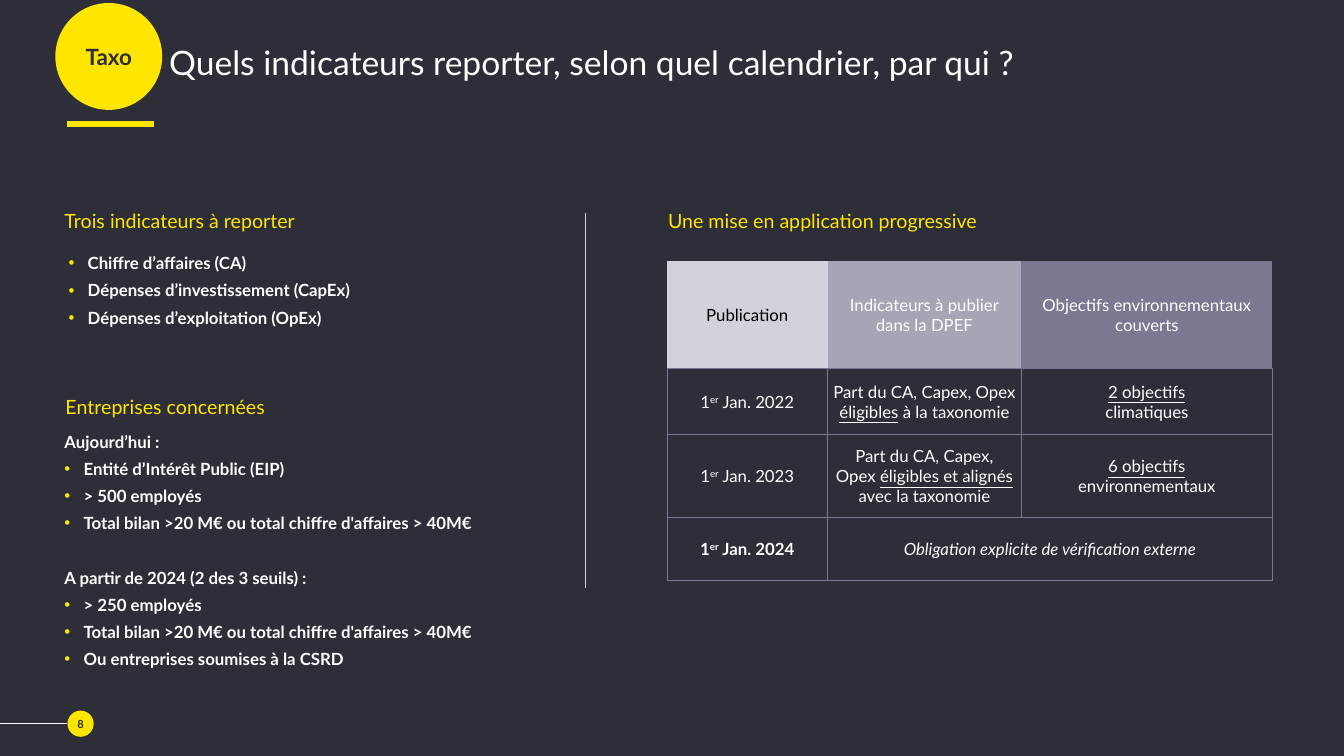
from typing import NamedTuple

from lxml import etree
from pptx import Presentation, util as u
from pptx.dml.color import RGBColor
from pptx.enum import shapes, text
from pptx.oxml import ns

DARK = RGBColor(0x2E, 0x2E, 0x38)
YELLOW = RGBColor(0xFF, 0xE6, 0x00)
WHITE = RGBColor(0xFF, 0xFF, 0xFF)
BLACK = RGBColor(0x00, 0x00, 0x00)
PALE = RGBColor(0xD2, 0xD2, 0xDA)
GREY = RGBColor(0xA5, 0xA5, 0xB5)
SLATE = RGBColor(0x79, 0x79, 0x91)

LEFT, CENTER = text.PP_ALIGN.LEFT, text.PP_ALIGN.CENTER
TOP, MIDDLE = text.MSO_ANCHOR.TOP, text.MSO_ANCHOR.MIDDLE

INDICATORS = ["• Chiffre d’affaires (CA)", "• Dépenses d’investissement (CapEx)",
              "• Dépenses d’exploitation (OpEx)"]
BALANCE = "• Total bilan >20 M€ ou total chiffre d'affaires > 40M€"
COMPANIES = ["Aujourd’hui :", "• Entité d’Intérêt Public (EIP)", "• > 500 employés", BALANCE,
             "A partir de 2024 (2 des 3 seuils) :", "• > 250 employés", BALANCE,
             "• Ou entreprises soumises à la CSRD"]

COL_SHARES = [26.53, 32.01, 41.46]
ROW_SHARES = [33.44, 20.82, 25.87, 19.87]
HEADERS = [("Publication", PALE, BLACK),
           ("Indicateurs à publier\ndans la DPEF", GREY, WHITE),
           ("Objectifs environnementaux couverts", SLATE, WHITE)]
UNDERLINE = {"underline": True}
ROWS = [
    ("2022", [("Part du CA, Capex, Opex\n", {}), ("éligibles", UNDERLINE), (" à la taxonomie", {})],
     [("2 objectifs", UNDERLINE), ("\nclimatiques", {})]),
    ("2023", [("Part du CA, Capex,\nOpex ", {}), ("éligibles et alignés", UNDERLINE),
              ("\navec la taxonomie", {})],
     [("6 objectifs", UNDERLINE), ("\nenvironnementaux", {})]),
    ("2024", [("Obligation explicite de vérification externe", {"italic": True})], []),
]


class Box(NamedTuple):
    """Rectangle whose areas are given as percentages of its size."""
    x: int
    y: int
    w: int
    h: int

    def area(self, x, y, w, h):
        """Return the sub-rectangle at the given percentages."""
        return Box(int(self.x + self.w * x / 100), int(self.y + self.h * y / 100),
                   int(self.w * w / 100), int(self.h * h / 100))


def add_runs(p, runs, size, color, **base):
    """Add formatted runs to a paragraph, with newlines as line breaks."""
    for content, extra in runs:
        fmt = {"name": "Lato", "size": u.Pt(size), **base, **extra}
        baseline = fmt.pop("baseline", None)
        for i, line in enumerate(content.split("\n")):
            if i:
                p.add_line_break()
            if not line:
                continue
            r = p.add_run()
            r.text = line
            for key, value in fmt.items():
                setattr(r.font, key, value)
            r.font.color.rgb = color
            if baseline:
                r._r.get_or_add_rPr().set("baseline", baseline)


def setup_frame(tf, anchor=MIDDLE):
    """Remove the margins and fix the anchor of a text frame."""
    fmt = {"margin_left": 0, "margin_right": 0, "margin_top": 0, "margin_bottom": 0,
           "word_wrap": True, "auto_size": text.MSO_AUTO_SIZE.NONE, "vertical_anchor": anchor}
    for key, value in fmt.items():
        setattr(tf, key, value)


def place(sp, box):
    """Move a shape to a box."""
    for key, value in zip(("left", "top", "width", "height"), box):
        setattr(sp, key, value)


def add_line(s, box, color, width):
    """Draw a straight line across a box."""
    line = s.shapes.add_connector(shapes.MSO_CONNECTOR.STRAIGHT, box.x, box.y,
                                  box.x + box.w, box.y + box.h)
    line.line.color.rgb = color
    line.line.width = u.Pt(width)
    etree.SubElement(line._element.spPr, ns.qn("a:effectLst"))


def add_badge(s, box, label, size):
    """Draw a yellow disc with a bold label."""
    sp = s.shapes.add_shape(shapes.MSO_SHAPE.OVAL, *box)
    sp.shadow.inherit = False
    sp.fill.solid()
    sp.fill.fore_color.rgb = YELLOW
    sp.line.fill.background()
    setup_frame(sp.text_frame)
    p = sp.text_frame.paragraphs[0]
    p.alignment = CENTER
    add_runs(p, [(label, {})], size, DARK, bold=True)


def add_heading(s, box, label):
    """Write a yellow section heading."""
    tf = s.shapes.add_textbox(*box).text_frame
    setup_frame(tf)
    add_runs(tf.paragraphs[0], [(label, {})], 14, YELLOW)


def set_bullet(p, bulleted):
    """Give a paragraph a yellow bullet, or none."""
    pPr = p._p.get_or_add_pPr()
    indent = u.Inches(0.19) if bulleted else 0
    pPr.set("marL", str(indent))
    pPr.set("indent", str(-indent))
    if bulleted:
        color = etree.SubElement(pPr, ns.qn("a:buClr"))
        etree.SubElement(color, ns.qn("a:srgbClr"), val=str(YELLOW))
        etree.SubElement(pPr, ns.qn("a:buFont"), typeface="Arial")
        etree.SubElement(pPr, ns.qn("a:buChar"), char="•")
    else:
        etree.SubElement(pPr, ns.qn("a:buNone"))


def add_header(s, box):
    """Place the title, its badge and the yellow rule."""
    title = s.shapes.title
    place(title, box.area(12.59, 21.33, 82.38, 43.33))
    setup_frame(title.text_frame)
    p = title.text_frame.paragraphs[0]
    p.alignment, p.line_spacing = LEFT, 0.85
    add_runs(p, [("Quels indicateurs reporter, selon quel calendrier, par qui ?", {})], 24, WHITE)
    add_line(s, box.area(5.02, 82, 6.45, 0), YELLOW, 4.5)
    add_badge(s, box.area(4.12, 2, 7.95, 70.67), "Taxo", 16)


def add_list_section(s, sp, box, heading, heading_area, items, list_area):
    """Place a heading and fill the body placeholder below it."""
    add_heading(s, box.area(*heading_area), heading)
    place(sp, box.area(*list_area))
    tf = sp.text_frame
    setup_frame(tf, TOP)
    for i, item in enumerate(items):
        p = tf.add_paragraph() if i else tf.paragraphs[0]
        bulleted = item.startswith("• ")
        gap = 0 if i == 0 else 5 if bulleted else 24.5
        fmt = {"alignment": LEFT, "space_before": u.Pt(gap), "space_after": 0, "line_spacing": 1.0}
        for key, value in fmt.items():
            setattr(p, key, value)
        set_bullet(p, bulleted)
        add_runs(p, [(item.removeprefix("• "), {})], 12, WHITE, bold=True)


def fill_cell(cell, runs, color=WHITE, fill=None, bold=False):
    """Write a centred cell with its fill and borders."""
    cell.margin_left = cell.margin_right = cell.margin_top = u.Inches(0.01)
    cell.margin_bottom = 0
    cell.vertical_anchor = MIDDLE
    tcPr = cell._tc.get_or_add_tcPr()
    for side in ("lnL", "lnR", "lnT", "lnB"):
        ln = etree.SubElement(tcPr, ns.qn(f"a:{side}"), w=str(u.Pt(0.5)))
        if fill is None:
            solid = etree.SubElement(ln, ns.qn("a:solidFill"))
            etree.SubElement(solid, ns.qn("a:srgbClr"), val=str(SLATE))
        else:
            etree.SubElement(ln, ns.qn("a:noFill"))
    cell.fill.solid()
    cell.fill.fore_color.rgb = fill or DARK
    p = cell.text_frame.paragraphs[0]
    p.alignment = CENTER
    add_runs(p, runs, 12, color, bold=bold)


def add_schedule(s, box):
    """Place the schedule heading and its table."""
    add_heading(s, box.area(0.17, 0, 99.5, 12.07), "Une mise en application progressive")
    grid = box.area(0, 16.54, 99.67, 83.2)
    table = s.shapes.add_table(len(ROW_SHARES), len(COL_SHARES), *grid).table
    table.horz_banding = False
    for col, share in zip(table.columns, COL_SHARES):
        col.width = int(grid.w * share / 100)
    for row, share in zip(table.rows, ROW_SHARES):
        row.height = int(grid.h * share / 100)
    for c, (label, fill, color) in enumerate(HEADERS):
        fill_cell(table.cell(0, c), [(label, {})], color, fill)
    for i, (year, indicators, goals) in enumerate(ROWS, 1):
        date = [("1", {}), ("er", {"baseline": "30000"}), (f" Jan. {year}", {})]
        fill_cell(table.cell(i, 0), date, bold=not goals)
        fill_cell(table.cell(i, 1), indicators)
        fill_cell(table.cell(i, 2), goals)
    table.cell(3, 1).merge(table.cell(3, 2))


def add_footer(s, box):
    """Place the page number and its line."""
    add_line(s, box.area(0, 46.67, 5.02, 0), WHITE, 0.75)
    add_badge(s, box.area(5.02, 25, 1.95, 43.33), "8", 8)


def main():
    """Build the slide and save it."""
    prs = Presentation()
    prs.slide_width, prs.slide_height = u.Inches(13.34), u.Inches(7.5)
    s = prs.slides.add_slide(prs.slide_layouts.get_by_name("Two Content"))
    s.background.fill.solid()
    s.background.fill.fore_color.rgb = DARK
    page = Box(0, 0, prs.slide_width, prs.slide_height)
    add_header(s, page.area(0, 0, 100, 20))
    add_list_section(s, s.placeholders[1], page.area(4.8, 26.13, 41, 17.33),
                     "Trois indicateurs à reporter", (0, 0, 90, 35.38),
                     INDICATORS, (0.73, 42.31, 99, 57.69))
    add_list_section(s, s.placeholders[2], page.area(4.8, 50.67, 44.23, 41.73),
                     "Entreprises concernées", (0.17, 0, 83.73, 14.7),
                     COMPANIES, (0, 15.34, 100, 84.66))
    add_line(s, page.area(43.55, 28.13, 0, 49.6), PALE, 0.75)
    add_schedule(s, page.area(49.63, 26.13, 45.2, 50.8))
    add_footer(s, page.area(0, 92, 100, 8))
    prs.save("out.pptx")


if __name__ == "__main__":
    main()
